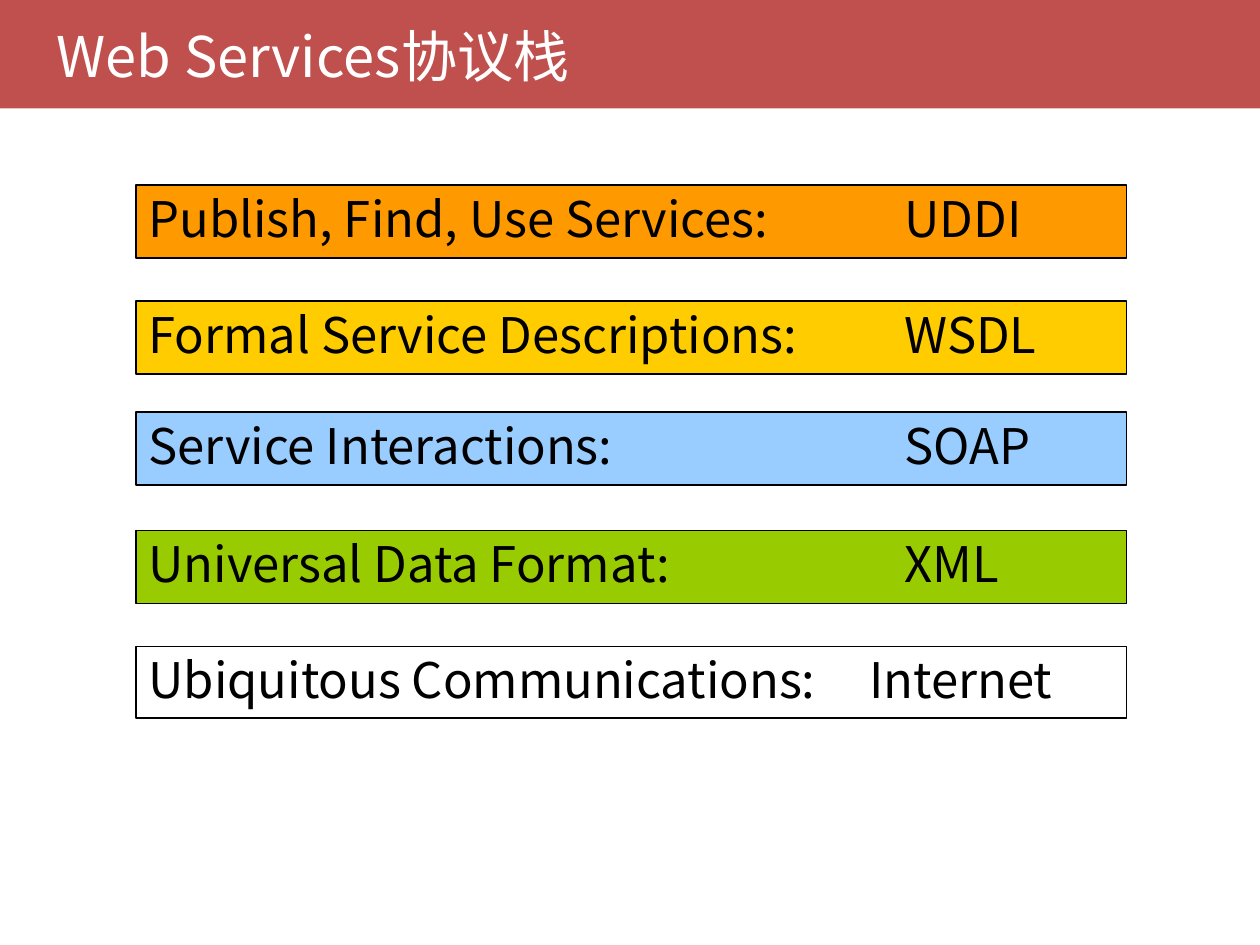
from dataclasses import dataclass
from typing import Optional

from lxml.etree import SubElement
from pptx import Presentation
from pptx.dml.color import RGBColor
from pptx.enum.shapes import MSO_SHAPE
from pptx.enum.text import MSO_ANCHOR, MSO_AUTO_SIZE, PP_ALIGN
from pptx.oxml.ns import qn
from pptx.shapes.group import GroupShape
from pptx.slide import Slide
from pptx.text.text import _Paragraph
from pptx.util import Pt

FONT = "Noto Sans CJK SC"
RED = RGBColor(0xC0, 0x50, 0x4D)
WHITE = RGBColor(0xFF, 0xFF, 0xFF)
BLACK = RGBColor(0x00, 0x00, 0x00)
ORANGE = RGBColor(0xFF, 0x99, 0x00)
YELLOW = RGBColor(0xFF, 0xCC, 0x00)
BLUE = RGBColor(0x99, 0xCC, 0xFF)
GREEN = RGBColor(0x99, 0xCC, 0x00)

LAYER_LEFT = 77.8
LAYER_WIDTH = 566
PROTOCOL_TAB = 432


@dataclass(frozen=True)
class Layer:
    purpose: str
    protocol: str
    top: float
    color: Optional[RGBColor]
    height: float = 41.8
    tab: float = PROTOCOL_TAB


LAYERS = [
    Layer("Ubiquitous Communications:", "Internet", 369.4, None, 41, 412),
    Layer("Universal Data Format:", "XML", 303.1, GREEN),
    Layer("Service Interactions:", "SOAP", 235.4, BLUE),
    Layer("Formal Service Descriptions:", "WSDL", 172.1, YELLOW),
    Layer("Publish, Find, Use Services:", "UDDI", 105.8, ORANGE),
]


def format_paragraph(paragraph: _Paragraph, size: float, color: RGBColor) -> None:
    paragraph.alignment = PP_ALIGN.LEFT
    for run in paragraph.runs:
        run.font.size = Pt(size)
        run.font.name = FONT
        run.font.color.rgb = color
        SubElement(run.font._element, qn("a:ea")).set("typeface", FONT)


def add_tab_stop(paragraph: _Paragraph, position: float) -> None:
    tabs = SubElement(paragraph._p.get_or_add_pPr(), qn("a:tabLst"))
    SubElement(tabs, qn("a:tab"), pos=str(Pt(position)), algn="l")


def add_header(slide: Slide, heading: str) -> None:
    band = slide.shapes.add_shape(MSO_SHAPE.RECTANGLE, Pt(0), Pt(0), Pt(720), Pt(62))
    band.shadow.inherit = False
    band.fill.solid()
    band.fill.fore_color.rgb = RED
    band.line.fill.background()

    title = slide.shapes.title
    title.left, title.top, title.width, title.height = Pt(25.2), Pt(1.4), Pt(625), Pt(60.5)
    band._element.addnext(title._element)
    frame = title.text_frame
    frame.text = heading
    frame.vertical_anchor = MSO_ANCHOR.MIDDLE
    frame.auto_size = MSO_AUTO_SIZE.NONE
    format_paragraph(frame.paragraphs[0], 32, WHITE)


def add_layer(stack: GroupShape, layer: Layer) -> None:
    box = stack.shapes.add_shape(
        MSO_SHAPE.RECTANGLE, Pt(LAYER_LEFT), Pt(layer.top), Pt(LAYER_WIDTH), Pt(layer.height)
    )
    box.shadow.inherit = False
    if layer.color is None:
        box.fill.background()
    else:
        box.fill.solid()
        box.fill.fore_color.rgb = layer.color
    box.line.color.rgb = BLACK
    box.line.width = Pt(1)

    frame = box.text_frame
    frame.word_wrap = True
    frame.vertical_anchor = MSO_ANCHOR.MIDDLE
    frame.margin_top = frame.margin_bottom = Pt(0)
    frame.text = f"{layer.purpose}\t{layer.protocol}"
    paragraph = frame.paragraphs[0]
    paragraph.line_spacing = 0.9
    format_paragraph(paragraph, 28, BLACK)
    add_tab_stop(paragraph, layer.tab)


def main() -> None:
    presentation = Presentation()
    presentation.slide_width, presentation.slide_height = Pt(720), Pt(540)
    slide = presentation.slides.add_slide(presentation.slide_layouts[5])
    add_header(slide, "Web Services协议栈")
    stack = slide.shapes.add_group_shape()
    for layer in LAYERS:
        add_layer(stack, layer)
    presentation.save("out.pptx")


if __name__ == "__main__":
    main()
